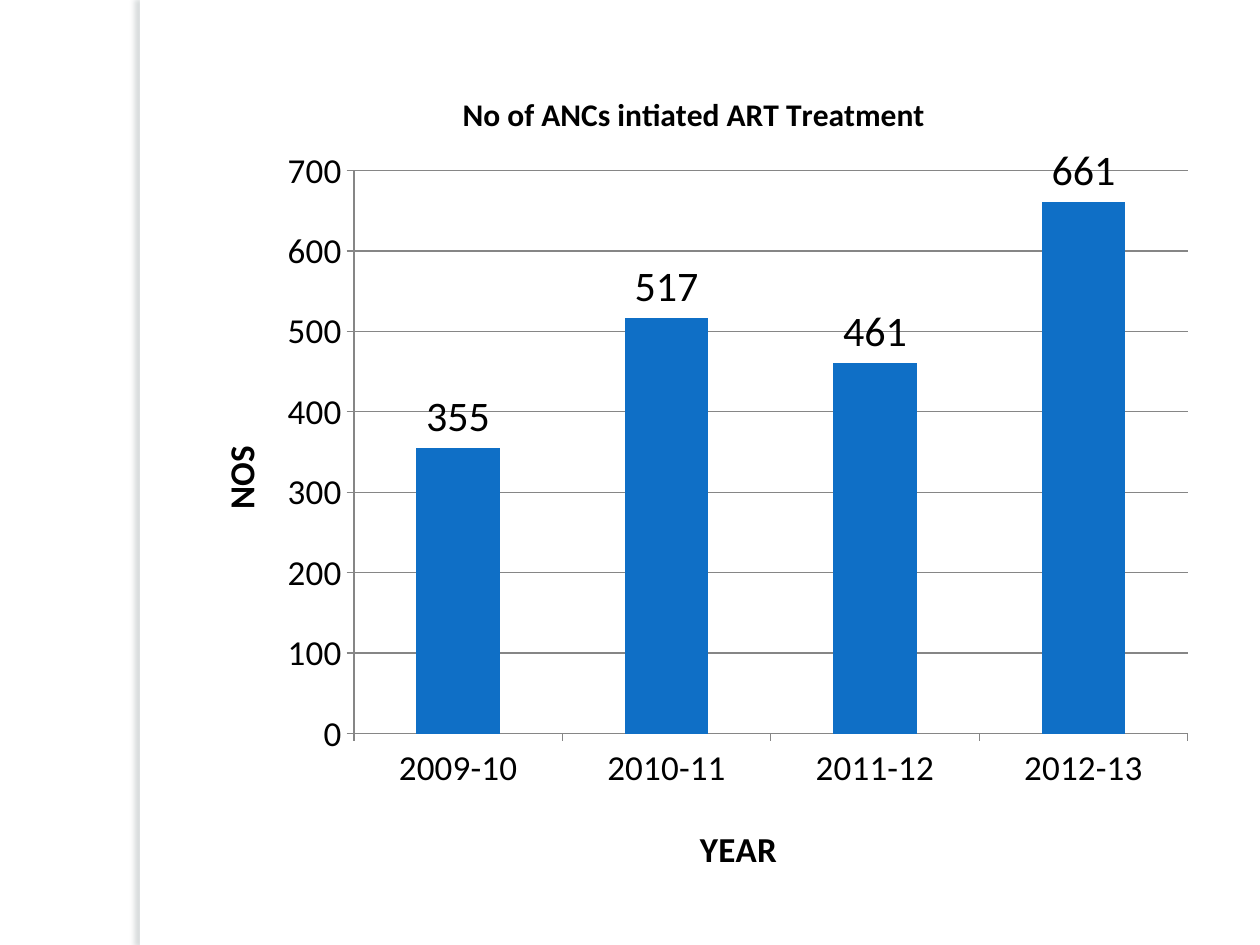
from pptx import Presentation
from pptx.chart.data import CategoryChartData
from pptx.dml.color import RGBColor
from pptx.enum.chart import XL_CHART_TYPE, XL_LABEL_POSITION, XL_TICK_MARK
from pptx.enum.shapes import MSO_SHAPE
from pptx.oxml import parse_xml
from pptx.oxml.ns import nsdecls, qn
from pptx.util import Inches, Pt

COLUMN = XL_CHART_TYPE.COLUMN_CLUSTERED
OUTSIDE_END = XL_LABEL_POSITION.OUTSIDE_END
TICK_OUT, TICK_NONE = XL_TICK_MARK.OUTSIDE, XL_TICK_MARK.NONE
RECTANGLE = MSO_SHAPE.RECTANGLE

COLORS = {"white": "FFFFFF", "text": "000000", "bar": "0F6FC6",
          "line": "868686", "shadow": "6C7A7C"}
TITLE = "No of ANCs intiated ART Treatment"
PATIENTS = {"2009-10": 355, "2010-11": 517, "2011-12": 461, "2012-13": 661}


class SlideBuilder:
    """Holds the slide style and adds the strip and the column chart."""

    def __init__(self, slide, font="Calibri"):
        self.slide = slide
        self.font = font
        slide.background.fill.solid()
        slide.background.fill.fore_color.rgb = self.color("white")

    def color(self, name):
        return RGBColor.from_string(COLORS[name])

    def style(self, font, size, bold=False):
        values = {"name": self.font, "size": Pt(size), "bold": bold}
        for attribute, value in values.items():
            setattr(font, attribute, value)
        font.color.rgb = self.color("text")

    def line(self, line):
        line.color.rgb = self.color("line")
        line.width = Pt(0.75)

    def layout(self, parent, index, **values):
        for old in parent.findall(qn("c:layout")):
            parent.remove(old)
        fields = "".join(f'<c:{key} val="{value}"/>' for key, value in values.items())
        parent.insert(index, parse_xml(
            f'<c:layout {nsdecls("c")}><c:manualLayout>{fields}'
            '</c:manualLayout></c:layout>'))

    def title(self, title, text, size, x, y):
        title.text_frame.text = text
        self.style(title.text_frame.paragraphs[0].runs[0].font, size, True)
        self.layout(title.element, 1, xMode="edge", yMode="edge", x=x, y=y)

    def strip(self, left, top, width, height):
        strip = self.slide.shapes.add_shape(
            RECTANGLE, Inches(left), Inches(top), Inches(width), Inches(height))
        strip.fill.solid()
        strip.fill.fore_color.rgb = self.color("white")
        strip.line.fill.background()
        strip.shadow.inherit = False
        effects = strip.element.spPr.find(qn("a:effectLst"))
        effects.append(parse_xml(
            f'<a:outerShdw {nsdecls("a")} blurRad="{Pt(3)}" dist="{Pt(3)}" '
            f'dir="10800000" rotWithShape="0"><a:srgbClr val="{COLORS["shadow"]}">'
            '<a:alpha val="25000"/></a:srgbClr></a:outerShdw>'))

    def axis(self, axis, text, x, y):
        values = {"major_tick_mark": TICK_OUT, "minor_tick_mark": TICK_NONE}
        for attribute, value in values.items():
            setattr(axis, attribute, value)
        self.style(axis.tick_labels.font, 20)
        self.line(axis.format.line)
        self.title(axis.axis_title, text, 20, x, y)

    def column_chart(self, left, top, width, height):
        data = CategoryChartData()
        data.categories = list(PATIENTS)
        data.add_series(TITLE, list(PATIENTS.values()))
        chart = self.slide.shapes.add_chart(
            COLUMN, Inches(left), Inches(top), Inches(width), Inches(height), data).chart
        chart.has_legend = False
        self.style(chart.font, 10)
        self.title(chart.chart_title, TITLE, 18, 0.27, 0.04)

        years, numbers = chart.category_axis, chart.value_axis
        self.axis(years, "YEAR", 0.5, 0.91)
        self.axis(numbers, "NOS", 0.03, 0.46)
        numbers.axis_title.element.find(".//" + qn("a:bodyPr")).set("rot", "-5400000")
        scale = {"minimum_scale": 0, "maximum_scale": 700, "major_unit": 100}
        for attribute, value in scale.items():
            setattr(numbers, attribute, value)
        self.line(numbers.major_gridlines.format.line)

        plot = chart.plots[0]
        plot.gap_width = 150
        plot.vary_by_categories = False
        bars = plot.series[0]
        bars.format.fill.solid()
        bars.format.fill.fore_color.rgb = self.color("bar")
        labels = bars.data_labels
        labels.show_value = True
        labels.position = OUTSIDE_END
        self.style(labels.font, 24)
        self.layout(chart.element.find(".//" + qn("c:plotArea")), 0,
                    layoutTarget="inner", xMode="edge", yMode="edge",
                    x=0.17, y=0.14, w=0.81, h=0.67)


def main():
    presentation = Presentation()
    presentation.slide_width = Inches(10)
    presentation.slide_height = Inches(7.5)
    builder = SlideBuilder(presentation.slides.add_slide(presentation.slide_layouts[6]))
    builder.strip(1.11, 0, 0.08, 7.5)
    builder.column_chart(1.42, 0.42, 8.17, 6.67)
    presentation.save("out.pptx")


if __name__ == "__main__":
    main()
